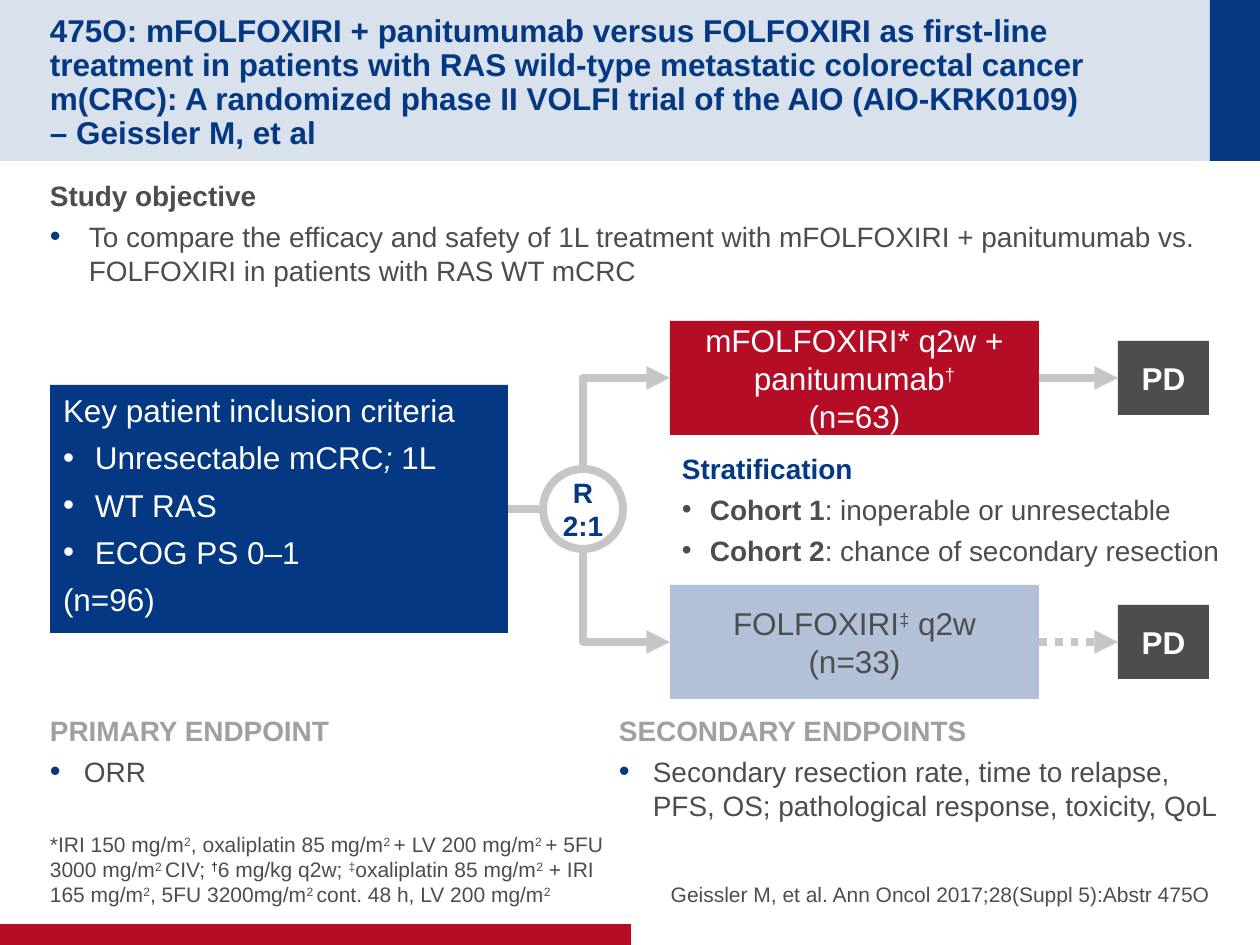
from dataclasses import dataclass

from lxml.etree import SubElement
from pptx import Presentation
from pptx.dml.color import RGBColor
from pptx.enum.dml import MSO_LINE
from pptx.enum.shapes import MSO_CONNECTOR, MSO_SHAPE
from pptx.enum.text import MSO_ANCHOR, PP_ALIGN
from pptx.oxml.ns import qn
from pptx.util import Emu, Pt


@dataclass(frozen=True)
class Theme:
    """Colours, type sizes and line weight of the deck."""
    font: str = "Arial"
    navy: str = "043882"
    red: str = "B60D27"
    pale: str = "B2C0D8"
    ink: str = "4D4D4D"
    muted: str = "A0A0A0"
    line: str = "C6C6C6"
    white: str = "FFFFFF"
    black: str = "000000"
    large: int = 18
    medium: int = 16
    small: int = 12
    weight: float = 4.5


@dataclass(frozen=True)
class Span:
    """A stretch of text; unset values follow the paragraph."""
    text: str
    bold: bool | None = None
    italic: bool = False
    color: str | None = None
    raised: bool = False


@dataclass(frozen=True)
class Line:
    """A paragraph and its formatting."""
    spans: tuple
    size: int
    color: str
    bold: bool = False
    align: PP_ALIGN = PP_ALIGN.LEFT
    after: float = 0
    spacing: float | None = None
    indent: int = 0
    bullet: str | None = None


THEME = Theme()
FOLLOW_TEXT = "text"
SIDE_INSETS = (13, 0, 13, 0)
TEXT_INSETS = (13, 6, 13, 6)
FLUSH_INSETS = (0, 6, 0, 6)
NO_INSETS = (0, 0, 0, 0)


def px(count):
    """Turn pixels into EMU."""
    return Emu(count * 914400 // 126)


def rgb(color):
    """Turn a hex string into a colour."""
    return RGBColor.from_string(color)


def sup(text, color=None):
    """Make a raised span."""
    return Span(text, color=color, raised=True)


def add_bullet(para, line):
    """Give a paragraph a hanging bullet."""
    props = para._p.get_or_add_pPr()
    props.set("marL", str(px(line.indent)))
    props.set("indent", str(-px(line.indent)))
    if line.bullet != FOLLOW_TEXT:
        tint = SubElement(props, qn("a:buClr"))
        SubElement(tint, qn("a:srgbClr"), val=line.bullet)
        SubElement(props, qn("a:buSzPct"), val="110000")
    SubElement(props, qn("a:buFont"), typeface=THEME.font)
    SubElement(props, qn("a:buChar"), char="•")


def add_span(para, line, part):
    """Add one run to a paragraph."""
    span = para.add_run()
    span.text = part.text
    font = span.font
    font.name, font.size = THEME.font, Pt(line.size)
    font.bold = line.bold if part.bold is None else part.bold
    font.italic = part.italic
    font.color.rgb = rgb(part.color or line.color)
    if part.raised:
        span._r.get_or_add_rPr().set("baseline", "30000")


def write(shape, lines, insets, anchor=MSO_ANCHOR.TOP, wrap=True):
    """Fill the text frame of a shape."""
    frame = shape.text_frame
    frame.word_wrap, frame.vertical_anchor = wrap, anchor
    frame.margin_left, frame.margin_top, frame.margin_right, frame.margin_bottom = map(px, insets)
    for index, line in enumerate(lines):
        para = frame.add_paragraph() if index else frame.paragraphs[0]
        para.alignment = line.align
        para.space_after = Pt(line.after)
        if line.spacing:
            para.line_spacing = line.spacing
        if line.bullet:
            add_bullet(para, line)
        for part in line.spans:
            if part == "\n":
                para.add_line_break()
            else:
                add_span(para, line, part if isinstance(part, Span) else Span(part))


def add_text(page, area, lines, insets=FLUSH_INSETS, anchor=MSO_ANCHOR.TOP):
    """Add a text box."""
    write(page.shapes.add_textbox(*map(px, area)), lines, insets, anchor)


def add_box(page, area, fill):
    """Add a plain filled rectangle."""
    box = page.shapes.add_shape(MSO_SHAPE.RECTANGLE, *map(px, area))
    box.shadow.inherit = False
    box.fill.solid()
    box.fill.fore_color.rgb = rgb(fill)
    box.line.fill.background()
    return box


def add_label_box(page, area, fill, rows, color, bold=False):
    """Add a rectangle with centred rows of large text."""
    box = add_box(page, area, fill)
    lines = [Line(row, THEME.large, color, bold, PP_ALIGN.CENTER) for row in rows]
    write(box, lines, SIDE_INSETS, MSO_ANCHOR.MIDDLE)
    return box


def add_ring(page, area, rows):
    """Add the randomization ring."""
    ring = page.shapes.add_shape(MSO_SHAPE.OVAL, *map(px, area))
    ring.shadow.inherit = False
    ring.fill.background()
    ring.line.color.rgb = rgb(THEME.line)
    ring.line.width = Pt(THEME.weight)
    lines = [Line((row,), THEME.medium, THEME.navy, True, PP_ALIGN.CENTER) for row in rows]
    write(ring, lines, TEXT_INSETS, MSO_ANCHOR.MIDDLE, wrap=False)


def add_link(page, start, end, arrow=True, dash=None, kind=MSO_CONNECTOR.STRAIGHT):
    """Add a grey connector."""
    link = page.shapes.add_connector(kind, *map(px, start + end))
    link.line.color.rgb = rgb(THEME.line)
    link.line.width = Pt(THEME.weight)
    if dash:
        link.line.dash_style = dash
    if arrow:
        SubElement(link.line._get_or_add_ln(), qn("a:tailEnd"), type="triangle")
    SubElement(link._element.spPr, qn("a:effectLst"))
    return link


def add_branch(page, start, end):
    """Add an arrow that runs vertically, then to the right."""
    link = add_link(page, start, end, kind=MSO_CONNECTOR.ELBOW)
    props = link._element.spPr
    props.find(qn("a:prstGeom")).set("prst", "bentConnector2")
    rise, run = abs(end[1] - start[1]), end[0] - start[0]
    link.left = px((start[0] + end[0] - rise) // 2)
    link.top = px((start[1] + end[1] - run) // 2)
    link.width, link.height = px(rise), px(run)
    upward = end[1] < start[1]
    frame = props.find(qn("a:xfrm"))
    frame.set("rot", str((90 if upward else 270) * 60000))
    frame.set("flipH", "1")
    frame.set("flipV", "1" if upward else "0")


def add_arm(page, middle, fill, rows, color, dash=None):
    """Add a treatment arm with its branch and outcome."""
    add_branch(page, (583, 469 if middle < 509 else 549), (670, middle))
    arm = add_label_box(page, (670, middle - 57, 369, 114), fill, rows, color)
    outcome = add_label_box(page, (1118, middle - 37, 91, 74), THEME.ink, [("PD",)], THEME.white, True)
    link = add_link(page, (1039, middle), (1118, middle), dash=dash)
    link.begin_connect(arm, 3)
    link.end_connect(outcome, 1)


def add_section(page, area, heading, color, point, indent, insets=FLUSH_INSETS):
    """Add a heading with one bulleted point."""
    add_text(page, area, [
        Line((heading,), THEME.medium, color, True, after=4),
        Line((point,), THEME.medium, THEME.ink, after=4, indent=indent, bullet=THEME.navy)], insets)


def add_frame(page):
    """Add the title band, its end block and the foot bar."""
    band = add_box(page, (0, 0, 1260, 161), THEME.navy)
    tint = band._element.spPr.find(qn("a:solidFill")).find(qn("a:srgbClr"))
    SubElement(tint, qn("a:alpha"), val="15000")
    add_box(page, (1210, 0, 50, 161), THEME.navy)
    add_box(page, (0, 924, 631, 21), THEME.red)
    title = ("475O: mFOLFOXIRI + panitumumab versus FOLFOXIRI as first-line treatment in patients with RAS "
             "wild-type metastatic colorectal cancer m(CRC): A randomized phase II VOLFI trial of the AIO "
             "(AIO-KRK0109) ")
    add_text(page, (50, 25, 1135, 111), [
        Line((title, "\n", "– Geissler M, et al"), THEME.large, THEME.navy, True, spacing=0.9)],
        (0, 6, 0, 0), MSO_ANCHOR.MIDDLE)


def add_criteria(page):
    """Add the inclusion criteria and the randomization."""
    box = add_box(page, (50, 385, 458, 248), THEME.navy)
    points = [("Unresectable mCRC", Span("; ", italic=True), "1L"), ("WT RAS",), ("ECOG PS 0–1",)]
    look = {"size": THEME.large, "color": THEME.white, "after": 5.4}
    write(box, [
        Line(("Key patient inclusion criteria",), **look),
        *(Line(point, indent=32, bullet=FOLLOW_TEXT, **look) for point in points),
        Line(("(n=96)",), **look)], TEXT_INSETS)
    add_link(page, (508, 509), (543, 509), arrow=False).begin_connect(box, 3)
    add_ring(page, (543, 469, 80, 80), ("R", "2:1"))


def add_stratification(page):
    """Add the two cohorts."""
    cohorts = [("Cohort 1", ": inoperable or unresectable"), ("Cohort 2", ": chance of secondary resection")]
    add_text(page, (669, 446, 581, 123), [
        Line(("Stratification",), THEME.medium, THEME.navy, True, after=4),
        *(Line((Span(name, bold=True), detail), THEME.medium, THEME.ink, after=4, indent=28, bullet=FOLLOW_TEXT)
          for name, detail in cohorts)], TEXT_INSETS)


def add_notes(page):
    """Add the dosing footnote and the citation."""
    doses = ("*IRI 150 mg/m", sup("2"), ", oxaliplatin 85 mg/m", sup("2 "), "+ LV 200 mg/m", sup("2 "),
             "+ 5FU 3000 mg/m", sup("2 "), "CIV; ", sup("†", THEME.black), "6 mg/kg q2w; ", sup("‡"),
             "oxaliplatin 85 mg/m", sup("2"), " + IRI 165 mg/m", sup("2"), ", 5FU 3200mg/m", sup("2 "),
             "cont. 48 h, LV 200 mg/m", sup("2"))
    citation = ("Geissler M, et al. Ann Oncol 2017;28(Suppl 5):Abstr 475O",)
    for left, spans, align in ((50, doses, PP_ALIGN.LEFT), (640, citation, PP_ALIGN.RIGHT)):
        add_text(page, (left, 840, 570, 67), [Line(spans, THEME.small, THEME.ink, align=align, after=4)],
                 NO_INSETS, MSO_ANCHOR.BOTTOM)


def main():
    """Build and save the slide."""
    deck = Presentation()
    deck.slide_width, deck.slide_height = px(1260), px(945)
    page = deck.slides.add_slide(deck.slide_layouts[6])
    add_frame(page)
    add_section(page, (50, 173, 1160, 126), "Study objective", THEME.ink,
                "To compare the efficacy and safety of 1L treatment with mFOLFOXIRI + panitumumab vs. "
                "FOLFOXIRI in patients with RAS WT mCRC", 39)
    add_criteria(page)
    add_arm(page, 378, THEME.red, [("mFOLFOXIRI* q2w + panitumumab", sup("†")), ("(n=63)",)], THEME.white)
    add_arm(page, 642, THEME.pale, [("FOLFOXIRI", sup("‡"), " q2w"), ("(n=33)",)], THEME.ink,
            MSO_LINE.ROUND_DOT)
    add_stratification(page)
    add_section(page, (50, 708, 570, 110), "PRIMARY ENDPOINT", THEME.muted, "ORR", 34)
    add_section(page, (606, 708, 643, 110), "SECONDARY ENDPOINTS", THEME.muted,
                "Secondary resection rate, time to relapse, PFS, OS; pathological response, toxicity, QoL",
                34, TEXT_INSETS)
    add_notes(page)
    deck.save("out.pptx")


if __name__ == "__main__":
    main()
